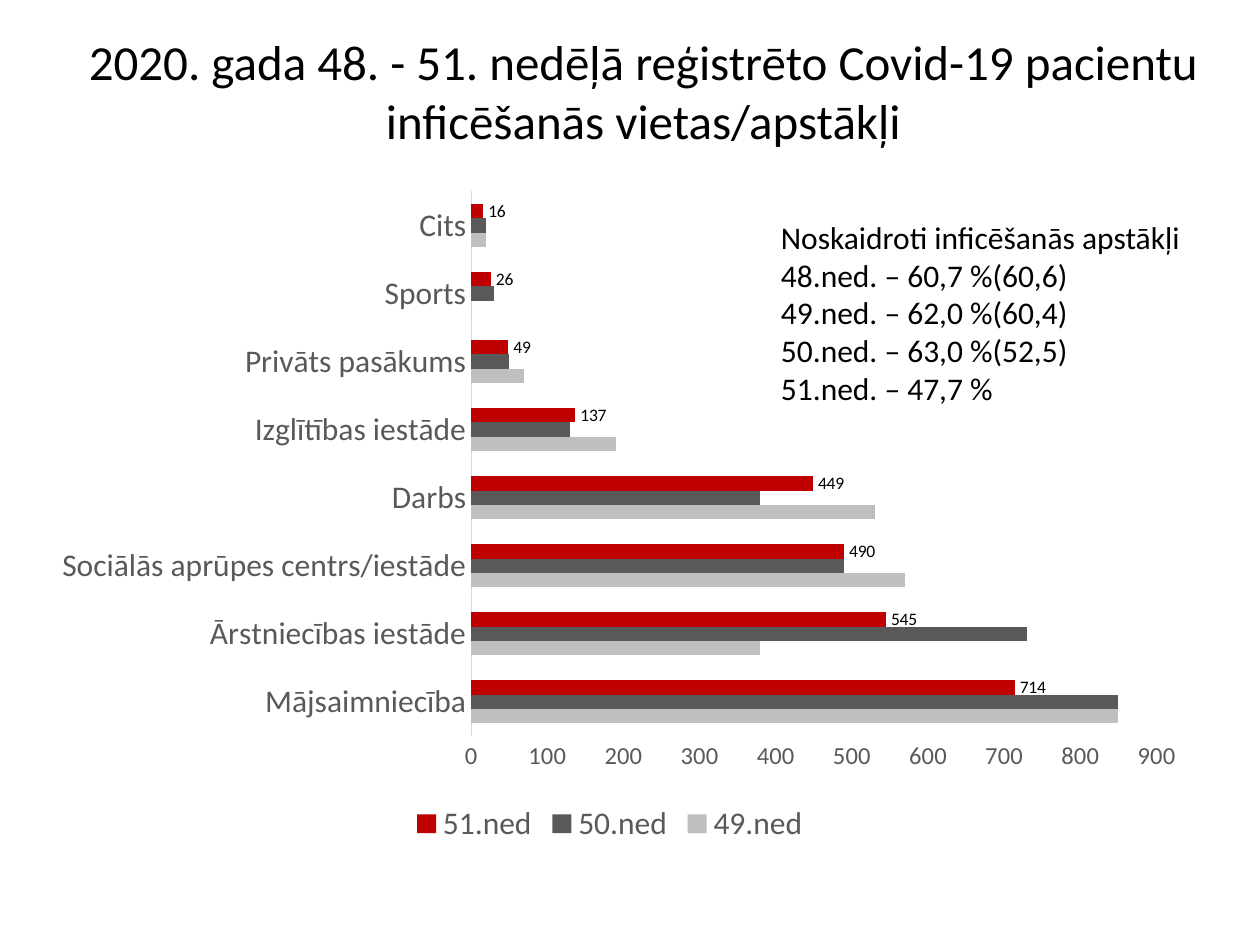
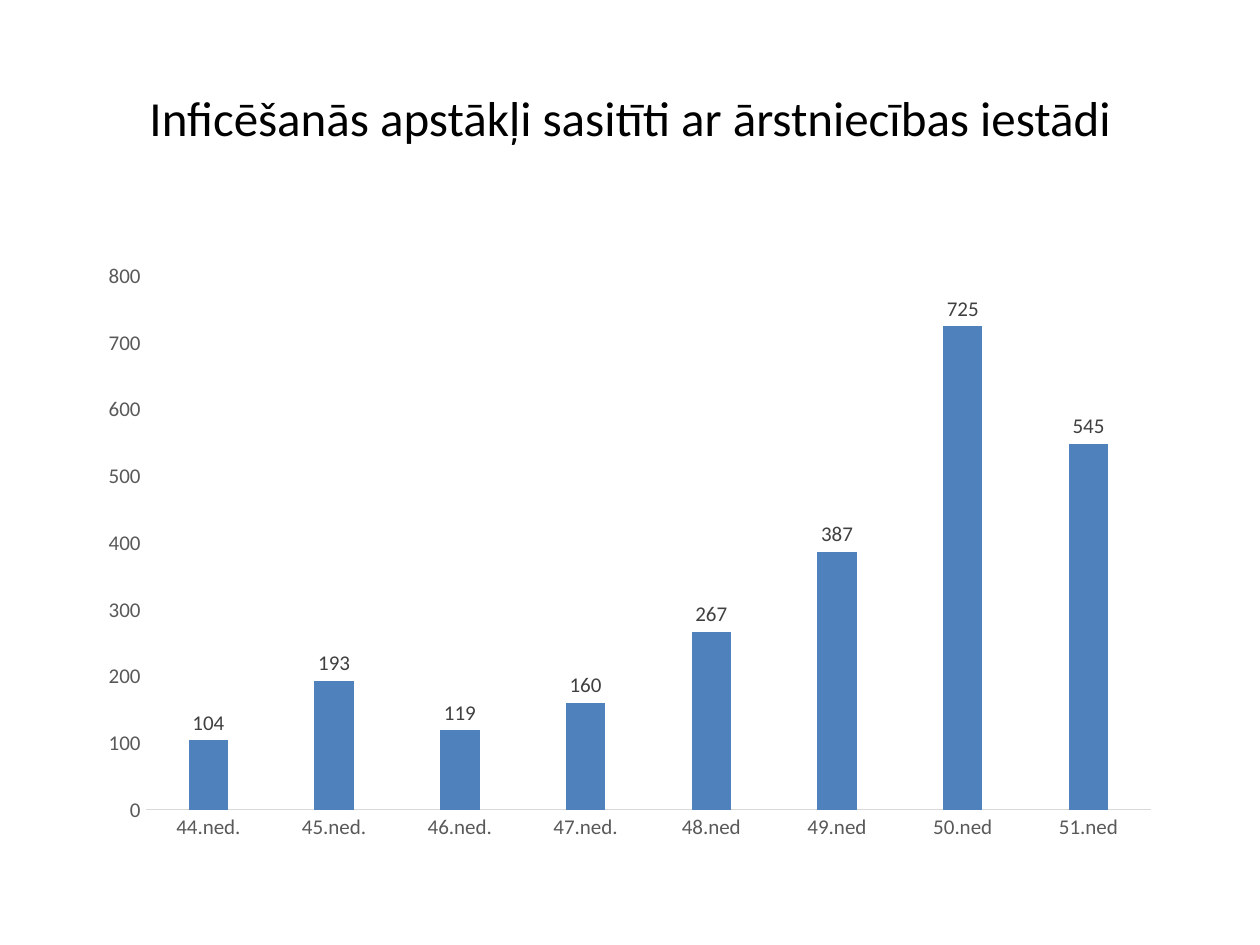
from dataclasses import dataclass
from typing import Any, Optional

from lxml import etree
from pptx import Presentation
from pptx.chart.data import CategoryChartData
from pptx.dml.color import RGBColor
from pptx.enum.chart import (
    XL_CHART_TYPE as CT,
    XL_LABEL_POSITION as LP,
    XL_LEGEND_POSITION as LEG,
    XL_TICK_MARK as TICK,
)
from pptx.enum.text import MSO_ANCHOR as ANCHOR, MSO_AUTO_SIZE as AUTO, PP_ALIGN as ALIGN
from pptx.oxml.ns import qn
from pptx.util import Inches, Pt

FONT = "Calibri"
BLACK, GREY, DARK, LINE = "000000", "595959", "404040", "D9D9D9"
SILVER, RED, BLUE = "BFBFBF", "C00000", "4F81BD"

TITLE_FMT = {"word_wrap": True, "vertical_anchor": ANCHOR.MIDDLE}
NOTE_FMT = {"word_wrap": False, "auto_size": AUTO.SHAPE_TO_FIT_TEXT}
AXIS_FMT = {
    "major_tick_mark": TICK.NONE,
    "minor_tick_mark": TICK.NONE,
    "has_major_gridlines": False,
}
LEGEND_FMT = {"position": LEG.BOTTOM, "include_in_layout": False}
LABEL_FMT = {"show_value": True, "position": LP.OUTSIDE_END}


@dataclass(frozen=True)
class Box:
    """Position and size in inches."""

    x: float
    y: float
    w: float
    h: float

    def emu(self) -> tuple:
        """Return the four lengths for python-pptx."""
        return tuple(Inches(v) for v in (self.x, self.y, self.w, self.h))


@dataclass(frozen=True)
class Series:
    """One chart series, with an optional label style."""

    name: str
    vals: tuple
    color: str
    label_size: Optional[int] = None
    label_color: str = BLACK
    label_format: str = "General"


@dataclass(frozen=True)
class BarChart:
    """A bar or column chart and its style."""

    kind: Any
    box: Box
    cats: tuple
    series: tuple
    cat_size: int
    val_size: int
    val_max: int
    plot_fmt: dict
    legend_size: Optional[int] = None
    plot_box: Optional[Box] = None


def rgb(color: str) -> RGBColor:
    """Turn a hex string into a colour."""
    return RGBColor.from_string(color)


def apply(obj: Any, fmt: dict) -> None:
    """Set each format value on the object."""
    for name, value in fmt.items():
        setattr(obj, name, value)


def style_font(font: Any, size: int, color: str = BLACK) -> None:
    """Set typeface, size and colour."""
    apply(font, {"name": FONT, "size": Pt(size), "bold": False})
    font.color.rgb = rgb(color)


def add_text(s: Any, box: Box, lines: tuple, size: int, fmt: dict, align: Any = ALIGN.LEFT) -> None:
    """Add a text box with one paragraph a line."""
    tf = s.shapes.add_textbox(*box.emu()).text_frame
    apply(tf, fmt)
    for i, line in enumerate(lines):
        p = tf.paragraphs[0] if i == 0 else tf.add_paragraph()
        p.alignment = align
        r = p.add_run()
        r.text = line
        style_font(r.font, size)


def add_title(s: Any, box: Box, text: str) -> None:
    """Add the slide title."""
    add_text(s, box, (text,), 28, TITLE_FMT, ALIGN.CENTER)


def set_plot_box(chart: Any, box: Box, plot_box: Box) -> None:
    """Fix the inner plot area, given in slide inches."""
    area = chart.plots[0]._element.getparent()
    for old in area.findall(qn("c:layout")):
        area.remove(old)
    root = etree.Element(qn("c:layout"))
    manual = etree.SubElement(root, qn("c:manualLayout"))
    values = {
        "layoutTarget": "inner",
        "xMode": "edge",
        "yMode": "edge",
        "x": (plot_box.x - box.x) / box.w,
        "y": (plot_box.y - box.y) / box.h,
        "w": plot_box.w / box.w,
        "h": plot_box.h / box.h,
    }
    for tag, value in values.items():
        etree.SubElement(manual, qn(f"c:{tag}")).set("val", str(value))
    area.insert(0, root)


def style_series(ser: Any, item: Series) -> None:
    """Colour a series and label it if asked."""
    ser.format.fill.solid()
    ser.format.fill.fore_color.rgb = rgb(item.color)
    ser.invert_if_negative = False
    if item.label_size:
        labels = ser.data_labels
        apply(labels, LABEL_FMT)
        apply(labels, {"number_format": item.label_format, "number_format_is_linked": False})
        style_font(labels.font, item.label_size, item.label_color)


def add_bars(s: Any, bars: BarChart) -> Any:
    """Add a bar chart and return it."""
    data = CategoryChartData()
    data.categories = bars.cats
    for item in bars.series:
        data.add_series(item.name, item.vals)
    chart = s.shapes.add_chart(bars.kind, *bars.box.emu(), data).chart
    apply(chart, {"has_title": False, "has_legend": bars.legend_size is not None})
    style_font(chart.font, 10)
    plot = chart.plots[0]
    apply(plot, {"vary_by_categories": False, **bars.plot_fmt})
    cat, val = chart.category_axis, chart.value_axis
    for axis, size in ((cat, bars.cat_size), (val, bars.val_size)):
        apply(axis, AXIS_FMT)
        style_font(axis.tick_labels.font, size, GREY)
    cat.format.line.color.rgb = rgb(LINE)
    cat.format.line.width = Pt(0.75)
    val.format.line.fill.background()
    apply(val, {"minimum_scale": 0, "maximum_scale": bars.val_max, "major_unit": 100})
    apply(val.tick_labels, {"number_format": "0", "number_format_is_linked": False})
    for ser, item in zip(plot.series, bars.series):
        style_series(ser, item)
    if bars.legend_size:
        apply(chart.legend, LEGEND_FMT)
        style_font(chart.legend.font, bars.legend_size, GREY)
    if bars.plot_box:
        set_plot_box(chart, bars.box, bars.plot_box)
    return chart


def relabel(chart: Any, index: int, text: str, size: int, color: str) -> None:
    """Give one point of the first series its own label."""
    label = chart.plots[0].series[0].points[index].data_label
    r = label.text_frame.paragraphs[0].add_run()
    r.text = text
    style_font(r.font, size, color)
    label.position = LP.OUTSIDE_END


PLACES = BarChart(
    kind=CT.BAR_CLUSTERED,
    box=Box(0.35, 1.39, 8.98, 5.35),
    cats=(
        "Mājsaimniecība",
        "Ārstniecības iestāde",
        "Sociālās aprūpes centrs/iestāde",
        "Darbs",
        "Izglītības iestāde",
        "Privāts pasākums",
        "Sports",
        "Cits",
    ),
    series=(
        Series("49.ned", (850, 380, 570, 530, 190, 70, 0, 20), SILVER),
        Series("50.ned", (850, 730, 490, 380, 130, 50, 30, 20), GREY),
        Series("51.ned", (714, 545, 490, 449, 137, 49, 26, 16), RED, 10, BLACK, "#,##0"),
    ),
    cat_size=18,
    val_size=14,
    val_max=900,
    plot_fmt={"gap_width": 182, "overlap": 0},
    legend_size=18,
    plot_box=Box(3.74, 1.52, 5.44, 4.32),
)

WEEKS = BarChart(
    kind=CT.COLUMN_CLUSTERED,
    box=Box(0.69, 2, 8.62, 4.76),
    cats=("44.ned.", "45.ned.", "46.ned.", "47.ned.", "48.ned", "49.ned", "50.ned", "51.ned"),
    series=(Series("Series 1", (104, 193, 119, 160, 267, 387, 725, 549), BLUE, 12, DARK),),
    cat_size=12,
    val_size=12,
    val_max=800,
    plot_fmt={"gap_width": 219, "overlap": -27},
)

KNOWN_SHARES = (
    "Noskaidroti inficēšanās apstākļi",
    "48.ned. – 60,7 %(60,6)",
    "49.ned. – 62,0 %(60,4)",
    "50.ned. – 63,0 %(52,5)",
    "51.ned. – 47,7 %",
)


def main() -> None:
    """Build both slides."""
    prs = Presentation()
    apply(prs, {"slide_width": Inches(10), "slide_height": Inches(7.5)})
    blank = prs.slide_layouts[6]

    s = prs.slides.add_slide(blank)
    add_title(
        s,
        Box(0.33, 0.09, 9.55, 1.25),
        "2020. gada 48. - 51. nedēļā reģistrēto Covid-19 pacientu inficēšanās vietas/apstākļi",
    )
    add_bars(s, PLACES)
    add_text(s, Box(6.1, 1.68, 3.4, 1.62), KNOWN_SHARES, 18, NOTE_FMT)

    s = prs.slides.add_slide(blank)
    add_title(s, Box(0.5, 0.3, 9, 1.25), "Inficēšanās apstākļi sasitīti ar ārstniecības iestādi")
    relabel(add_bars(s, WEEKS), 7, "545", 12, DARK)

    prs.save("out.pptx")


if __name__ == "__main__":
    main()
